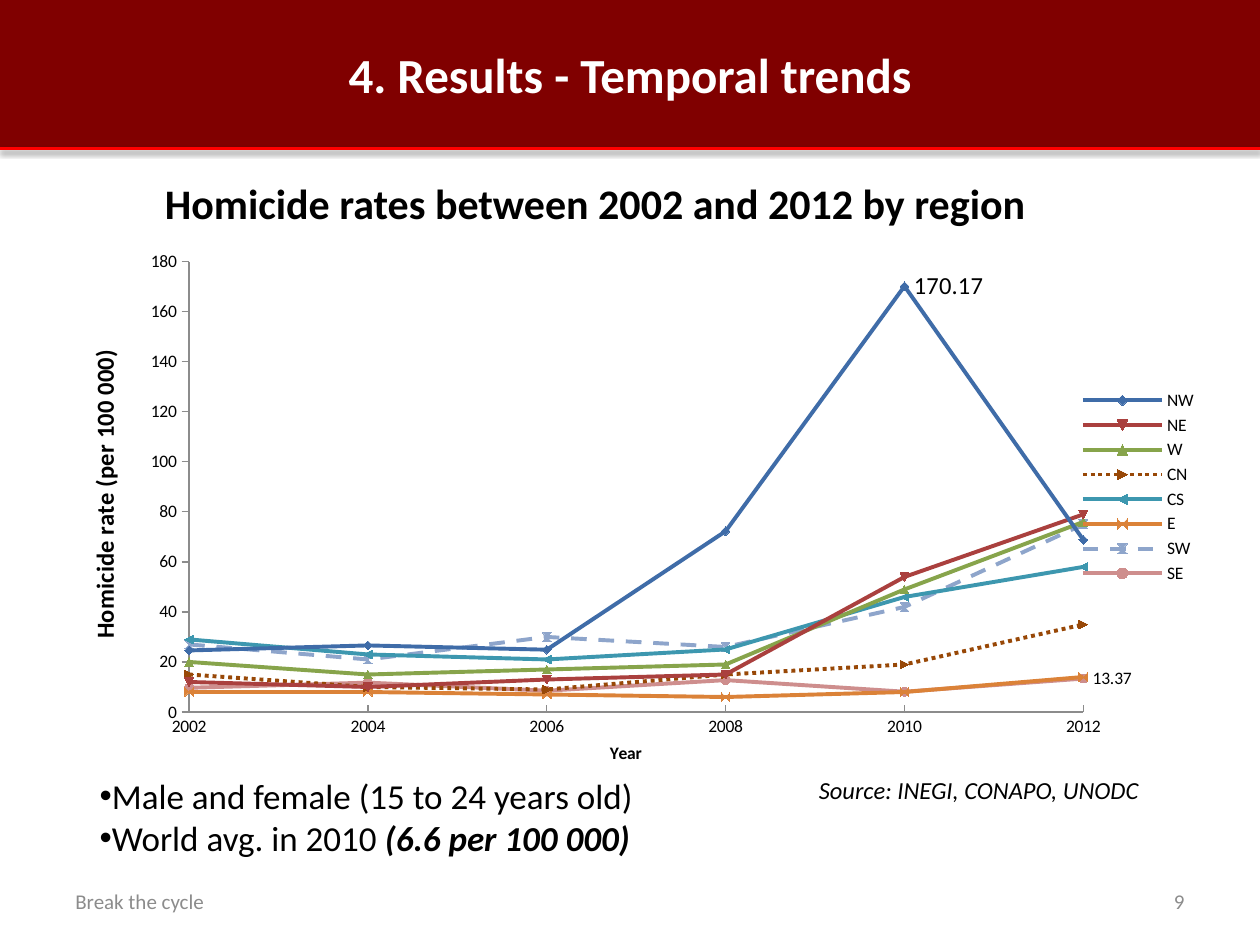
import lxml.etree
import pptx
import pptx.chart.data
import pptx.dml.color
import pptx.enum.chart
import pptx.enum.dml
import pptx.enum.shapes
import pptx.enum.text
import pptx.oxml.ns
import pptx.util

Inches, Pt = pptx.util.Inches, pptx.util.Pt
RGBColor = pptx.dml.color.RGBColor
Align, Anchor = pptx.enum.text.PP_ALIGN, pptx.enum.text.MSO_ANCHOR
Dash = pptx.enum.dml.MSO_LINE
qn = pptx.oxml.ns.qn

MAROON = RGBColor(0x80, 0x00, 0x00)
RED = RGBColor(0xFF, 0x00, 0x00)
WHITE = RGBColor(0xFF, 0xFF, 0xFF)
BLACK = RGBColor(0x00, 0x00, 0x00)
GREY = RGBColor(0x8C, 0x8C, 0x8C)
BLUE = RGBColor(0x3F, 0x6C, 0xA8)
BRICK = RGBColor(0xAA, 0x40, 0x3E)
GREEN = RGBColor(0x87, 0xA4, 0x4B)
BROWN = RGBColor(0x98, 0x48, 0x07)
TEAL = RGBColor(0x3D, 0x97, 0xAF)
ORANGE = RGBColor(0xDB, 0x82, 0x38)
PALE_BLUE = RGBColor(0x8E, 0xA5, 0xCB)
PINK = RGBColor(0xCE, 0x8E, 0x8D)

YEARS = range(2002, 2013, 2)
REGIONS = [
    ("NW", BLUE, Dash.SOLID, [24.6, 26.61, 24.91, 72.26, 170.17, 68.81]),
    ("NE", BRICK, Dash.SOLID, [12, 10, 13, 15, 54, 79]),
    ("W", GREEN, Dash.SOLID, [20, 15, 17, 19, 49, 76]),
    ("CN", BROWN, Dash.ROUND_DOT, [15, 10, 9, 15, 19, 35]),
    ("CS", TEAL, Dash.SOLID, [29, 23, 21, 25, 46, 58]),
    ("E", ORANGE, Dash.SOLID, [8, 8, 7, 6, 8, 14]),
    ("SW", PALE_BLUE, Dash.DASH, [27, 21, 30, 26, 42, 75]),
    ("SE", PINK, Dash.SOLID, [9.68, 11.75, 8.51, 12.76, 8.11, 13.37]),
]
POINT_LABELS = [(0, 4, 14), (7, 5, 10)]


def set_font(font, size, color=BLACK, **formats):
    """Apply Calibri, a point size, a colour and further attributes."""
    font.color.rgb = color
    values = {"name": "Calibri", "size": Pt(size), **formats}
    for name, value in values.items():
        setattr(font, name, value)


def place(shape, box):
    """Move a shape into a box of left, top, width and height in inches."""
    for name, value in zip(("left", "top", "width", "height"), box):
        setattr(shape, name, Inches(value))


def add_text(page, box, text, size, color=BLACK, align=Align.LEFT, anchor=Anchor.TOP, **formats):
    """Add a one-line text box."""
    frame = page.shapes.add_textbox(*map(Inches, box)).text_frame
    frame.word_wrap = True
    frame.vertical_anchor = anchor
    para = frame.paragraphs[0]
    para.alignment = align
    span = para.add_run()
    span.text = text
    set_font(span.font, size, color, **formats)


def add_banner(page, box):
    """Fill the title band and underline it with a shadowed red rule."""
    left, top, width, height = box
    title = page.shapes.title
    place(title, box)
    title.fill.solid()
    title.fill.fore_color.rgb = MAROON
    title.text_frame.vertical_anchor = Anchor.MIDDLE
    title.text_frame.text = "4. Results - Temporal trends"
    para = title.text_frame.paragraphs[0]
    para.alignment = Align.CENTER
    set_font(para.runs[0].font, 28, WHITE, bold=True)

    bottom = Inches(top + height)
    rule = page.shapes.add_connector(
        pptx.enum.shapes.MSO_CONNECTOR.STRAIGHT,
        Inches(left), bottom, Inches(left + width), bottom)
    rule.line.color.rgb = RED
    rule.line.width = Pt(2)
    effects = lxml.etree.SubElement(rule._element.spPr, qn("a:effectLst"))
    shadow = lxml.etree.SubElement(
        effects, qn("a:outerShdw"), blurRad=str(Pt(3.1)), dist=str(Pt(1.6)),
        dir="5400000", rotWithShape="0")
    color = lxml.etree.SubElement(shadow, qn("a:srgbClr"), val=str(BLACK))
    lxml.etree.SubElement(color, qn("a:alpha"), val="38000")


def format_axis(axis, title, title_size, tick, **scale):
    """Set the title, scale, tick marks and line of one axis."""
    axis.has_title = True
    axis.axis_title.text_frame.text = title
    span = axis.axis_title.text_frame.paragraphs[0].runs[0]
    set_font(span.font, title_size, bold=True)
    values = {"has_major_gridlines": False, "major_tick_mark": tick,
              "minor_tick_mark": pptx.enum.chart.XL_TICK_MARK.NONE, **scale}
    for name, value in values.items():
        setattr(axis, name, value)
    axis.format.line.color.rgb = GREY


def set_plot_area(chart, **area):
    """Fix the inner plot area as fractions of the chart."""
    plot_area = chart._chartSpace.chart.plotArea
    for old in plot_area.findall(qn("c:layout")):
        plot_area.remove(old)
    layout = lxml.etree.Element(qn("c:layout"))
    manual = lxml.etree.SubElement(layout, qn("c:manualLayout"))
    values = {"layoutTarget": "inner", "xMode": "edge", "yMode": "edge", **area}
    for name, value in values.items():
        lxml.etree.SubElement(manual, qn("c:" + name), val=str(value))
    plot_area.insert(0, layout)


def add_rate_chart(page, box):
    """Add the scatter chart of homicide rates by region."""
    data = pptx.chart.data.XyChartData()
    for name, _, _, rates in REGIONS:
        series = data.add_series(name)
        for year, rate in zip(YEARS, rates):
            series.add_data_point(year, rate)
    chart = page.shapes.add_chart(
        pptx.enum.chart.XL_CHART_TYPE.XY_SCATTER_LINES, *map(Inches, box), data).chart
    set_font(chart.font, 10)
    chart.has_title = False
    chart.has_legend = True
    chart.legend.position = pptx.enum.chart.XL_LEGEND_POSITION.RIGHT
    chart.legend.include_in_layout = False
    set_plot_area(chart, x=0.11, y=0.1, w=0.78, h=0.8)

    ticks = pptx.enum.chart.XL_TICK_MARK
    format_axis(chart.category_axis, "Year", 10, ticks.INSIDE,
                minimum_scale=2002, maximum_scale=2012, major_unit=2)
    format_axis(chart.value_axis, "Homicide rate (per 100 000)", 14, ticks.OUTSIDE,
                minimum_scale=0, maximum_scale=180, major_unit=20)

    plot = chart.plots[0]
    plot.vary_by_categories = False
    for series, (_, color, dash, _) in zip(plot.series, REGIONS):
        series.smooth = False
        series.format.line.color.rgb = color
        series.format.line.width = Pt(2.25)
        series.format.line.dash_style = dash
        series.marker.size = 5
        series.marker.format.fill.solid()
        series.marker.format.fill.fore_color.rgb = color
        series.marker.format.line.color.rgb = color
    for series_index, point_index, size in POINT_LABELS:
        label = plot.series[series_index].points[point_index].data_label
        set_font(label.font, size)
        label.position = pptx.enum.chart.XL_LABEL_POSITION.RIGHT


def add_notes_list(page, box):
    """Fill the body placeholder with the two bulleted remarks."""
    body = page.placeholders[1]
    place(body, box)
    frame = body.text_frame
    frame.auto_size = pptx.enum.text.MSO_AUTO_SIZE.NONE
    remarks = [
        [("Male and female (15 to 24 years old)", False)],
        [("World avg. in 2010 ", False), ("(6.6 per 100 000)", True)],
    ]
    for index, remark in enumerate(remarks):
        para = frame.add_paragraph() if index else frame.paragraphs[0]
        para.space_before = Pt(0)
        properties = para._p.get_or_add_pPr()
        properties.set("marL", "0")
        properties.set("indent", "0")
        lxml.etree.SubElement(properties, qn("a:buChar"), char="•")
        for text, strong in remark:
            span = para.add_run()
            span.text = text
            set_font(span.font, 20, bold=strong, italic=strong)


def add_footer(page, box):
    """Write the footer text on the left and the page number on the right."""
    left, top, width, height = box
    part = 2.33
    for offset, text, align in ((0, "Break the cycle", Align.LEFT),
                                (width - part, "9", Align.RIGHT)):
        add_text(page, (left + offset, top, part, height), text, 12, GREY, align, Anchor.MIDDLE)


def main():
    """Build and save the slide."""
    deck = pptx.Presentation()
    deck.slide_width, deck.slide_height = Inches(10), Inches(7.5)
    page = deck.slides.add_slide(deck.slide_layouts[1])
    add_banner(page, (0, 0, 10, 1.18))
    add_rate_chart(page, (0.5, 1.63, 9.1, 4.47))
    add_text(page, (1.21, 1.36, 8.38, 0.5),
             "Homicide rates between 2002 and 2012 by region", 24, bold=True)
    add_notes_list(page, (0.69, 6.1, 5.42, 0.77))
    add_text(page, (6.4, 6.1, 3.37, 0.34), "Source: INEGI, CONAPO, UNODC", 14, italic=True)
    add_footer(page, (0.5, 6.95, 9, 0.4))
    deck.save("out.pptx")


if __name__ == "__main__":
    main()
